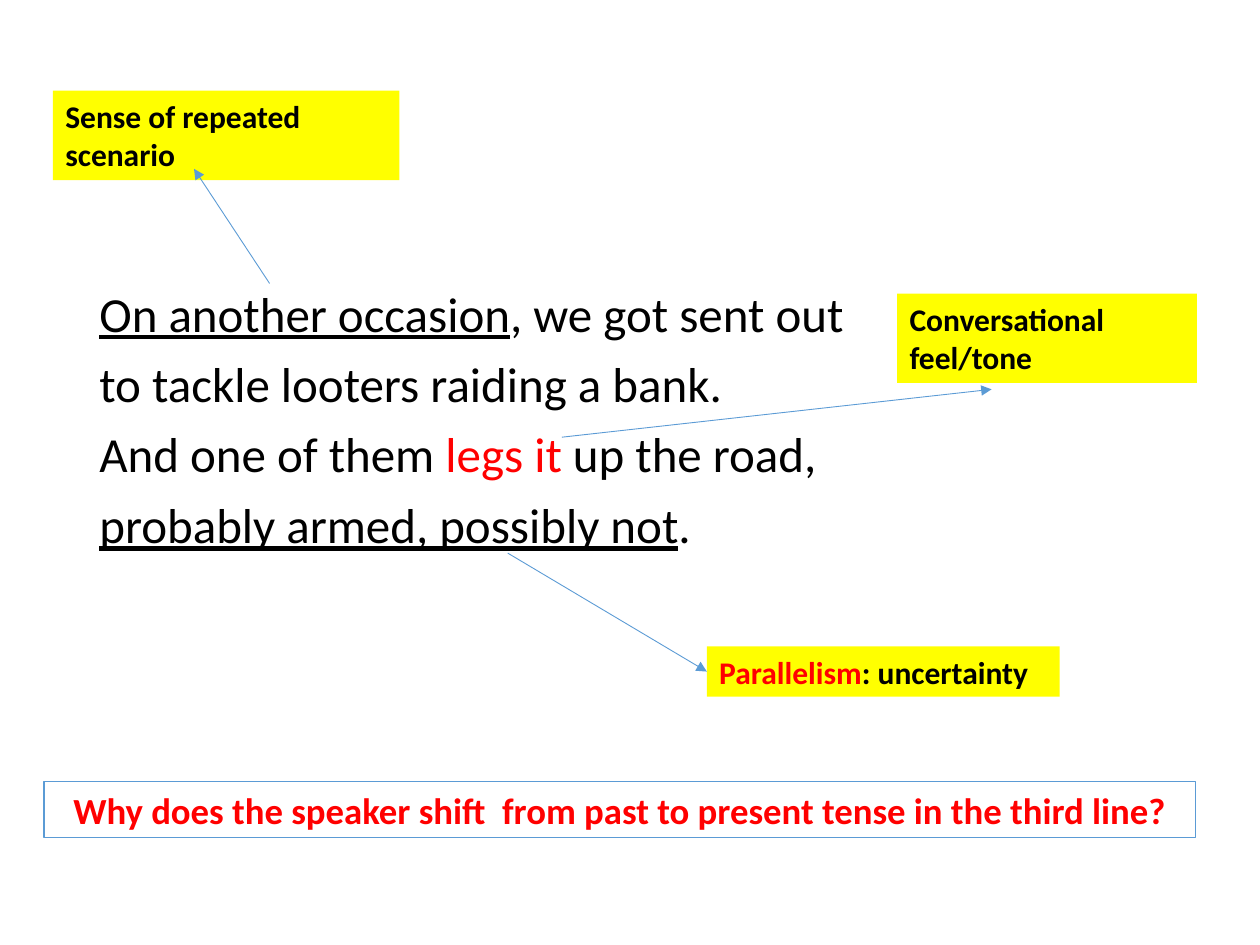
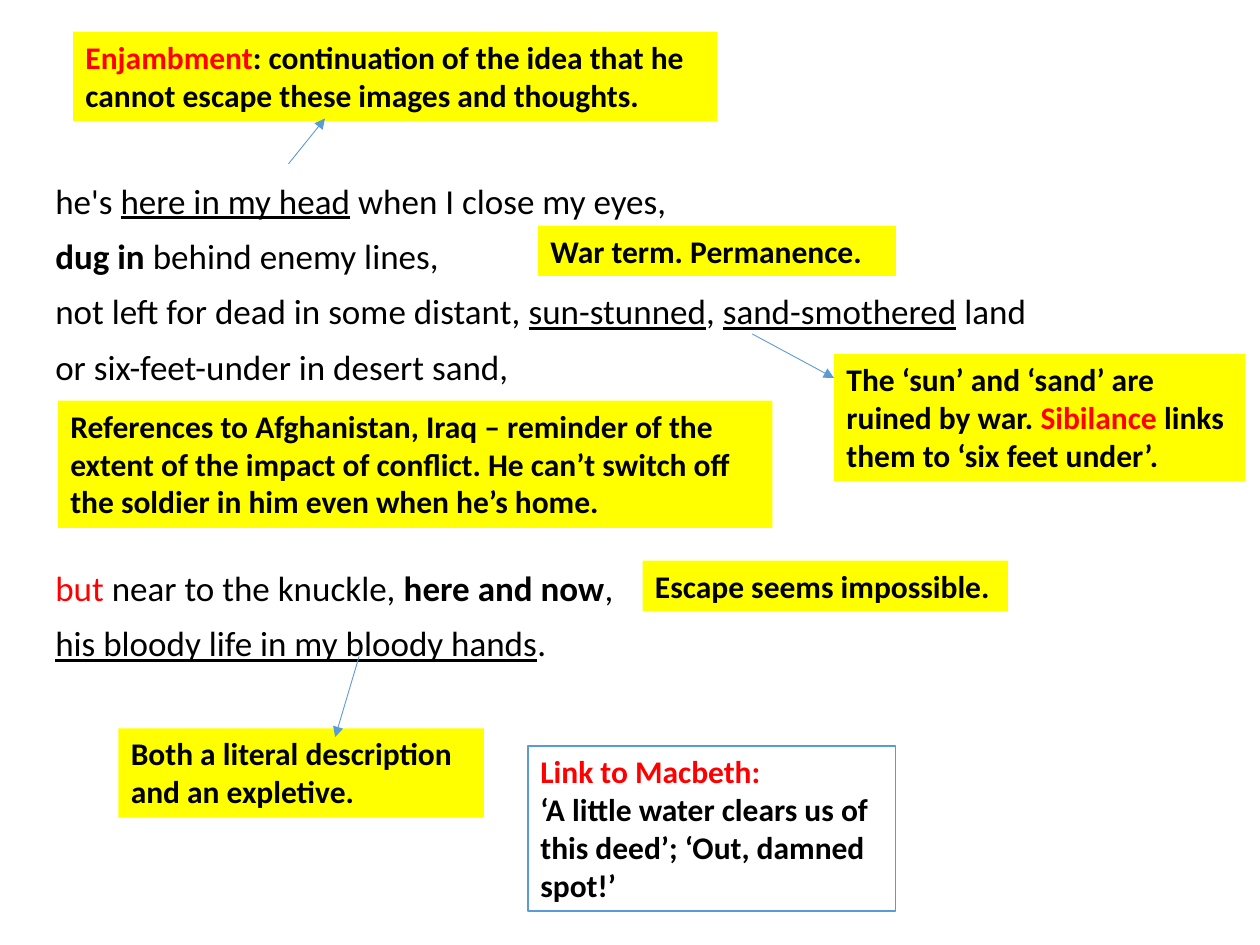
from dataclasses import dataclass
from typing import Optional

from lxml.etree import SubElement
from pptx import Presentation
from pptx.dml.color import RGBColor
from pptx.enum.dml import MSO_THEME_COLOR
from pptx.enum.shapes import MSO_CONNECTOR
from pptx.enum.text import MSO_ANCHOR, MSO_AUTO_SIZE, PP_ALIGN
from pptx.oxml.ns import qn
from pptx.util import Inches, Pt

FONT = "Calibri"
BLACK = "000000"
RED = "FF0000"
YELLOW = "FFFF00"
BLUE = "5B9BD5"
VERSE_GAP = 10
NOTE_SIZE = 18


@dataclass(frozen=True)
class Run:
    text: str
    color: str = BLACK
    bold: bool = False
    underline: bool = False


@dataclass(frozen=True)
class Paragraph:
    runs: tuple[Run, ...]
    space_before: float = 0
    line_spacing: float = 1


@dataclass(frozen=True)
class Box:
    left: float
    top: float
    width: float
    height: float
    paragraphs: tuple[Paragraph, ...]
    size: float = NOTE_SIZE
    fill: Optional[str] = None
    outline: Optional[str] = None
    centered: bool = False


@dataclass(frozen=True)
class Arrow:
    start: tuple[float, float]
    end: tuple[float, float]
    target: Optional[Box] = None
    side: int = 1


@dataclass(frozen=True)
class Page:
    boxes: tuple[Box, ...]
    arrows: tuple[Arrow, ...]


def rgb(color: str) -> RGBColor:
    return RGBColor.from_string(color)


def verse(*runs: Run, space_before: float = VERSE_GAP) -> Paragraph:
    return Paragraph(runs, space_before, 0.9)


def strong(text: str, color: str = BLACK) -> Run:
    return Run(text, color, bold=True)


def marked(text: str) -> Run:
    return Run(text, underline=True)


def note(left: float, top: float, width: float, height: float, *runs: Run) -> Box:
    return Box(left, top, width, height, (Paragraph(runs),), fill=YELLOW)


def draw_box(slide, box: Box):
    shape = slide.shapes.add_textbox(
        Inches(box.left), Inches(box.top), Inches(box.width), Inches(box.height)
    )
    if box.fill:
        shape.fill.solid()
        shape.fill.fore_color.rgb = rgb(box.fill)
    if box.outline:
        shape.line.color.rgb = rgb(box.outline)
        shape.line.width = Pt(0.75)
    frame = shape.text_frame
    frame.word_wrap = True
    frame.vertical_anchor = MSO_ANCHOR.TOP
    if box.fill or box.outline:
        frame.auto_size = MSO_AUTO_SIZE.SHAPE_TO_FIT_TEXT
    for index, content in enumerate(box.paragraphs):
        paragraph = frame.add_paragraph() if index else frame.paragraphs[0]
        paragraph.alignment = PP_ALIGN.CENTER if box.centered else PP_ALIGN.LEFT
        paragraph.line_spacing = content.line_spacing
        paragraph.space_before = Pt(content.space_before)
        for piece in content.runs:
            run = paragraph.add_run()
            run.text = piece.text
            run.font.name = FONT
            run.font.size = Pt(box.size)
            run.font.bold = piece.bold
            run.font.underline = piece.underline
            run.font.color.rgb = rgb(piece.color)
    return shape


def draw_arrow(slide, arrow: Arrow, drawn: dict) -> None:
    points = [Inches(value) for value in arrow.start + arrow.end]
    connector = slide.shapes.add_connector(MSO_CONNECTOR.STRAIGHT, *points)
    if arrow.target:
        connector.end_connect(drawn[arrow.target], arrow.side)
    connector.line.color.rgb = rgb(BLUE)
    connector.line.width = Pt(0.5)
    SubElement(connector.line._get_or_add_ln(), qn("a:tailEnd"), type="triangle")
    SubElement(connector._element.spPr, qn("a:effectLst"))


def draw_page(presentation, page: Page) -> None:
    slide = presentation.slides.add_slide(presentation.slide_layouts[6])
    slide.background.fill.solid()
    slide.background.fill.fore_color.theme_color = MSO_THEME_COLOR.BACKGROUND_1
    drawn = {box: draw_box(slide, box) for box in page.boxes}
    for arrow in page.arrows:
        draw_arrow(slide, arrow, drawn)


looters_stanza = Box(
    0.69, 2.25, 8.62, 4.51,
    (
        verse(marked("On another occasion"), Run(", we got sent out")),
        verse(Run("to tackle looters raiding a bank.")),
        verse(Run("And one of them "), Run("legs it ", RED), Run("up the road,")),
        verse(marked("probably armed, possibly not"), Run(".")),
    ),
    size=28,
)
parallelism = note(5.61, 5.13, 2.8, 0.4, strong("Parallelism", RED), strong(": uncertainty"))
tense_question = Box(
    0.35, 6.2, 9.14, 0.45,
    (Paragraph((strong(
        "Why does the speaker shift  from past to present tense in the third line?", RED
    ),)),),
    size=21, outline=BLUE, centered=True,
)
looters_page = Page(
    boxes=(
        looters_stanza,
        note(0.42, 0.72, 2.75, 0.71, strong("Sense of repeated scenario")),
        note(7.12, 2.33, 2.38, 0.71, strong("Conversational feel/tone")),
        parallelism,
        tense_question,
    ),
    arrows=(
        Arrow((2.14, 2.25), (1.54, 1.34)),
        Arrow((4.46, 3.47), (7.87, 3.09)),
        Arrow((4.03, 4.39), (5.61, 5.33), parallelism),
    ),
)

memory_stanza = Box(
    0.34, 1.41, 8.62, 4.91,
    (
        verse(Run("he's "), marked("here in my head"), Run(" when I close my eyes,")),
        verse(strong("dug in "), Run("behind enemy lines,")),
        verse(
            Run("not left for dead in some distant, "), marked("sun-stunned"), Run(", "),
            marked("sand-smothered"), Run(" land"),
        ),
        verse(Run("or six-feet-under in desert sand,")),
        verse(
            Run("but ", RED), Run("near to the knuckle, "), strong("here and now"), Run(","),
            space_before=105,
        ),
        verse(marked("his bloody life in my bloody hands"), Run(".")),
    ),
    size=20,
)
macbeth_link = Box(
    4.19, 5.92, 2.92, 1.31,
    (
        Paragraph((strong("Link to Macbeth:", RED),)),
        Paragraph((strong("‘A little water clears us of this deed’; ‘Out, damned spot!’"),)),
    ),
    outline=BLUE,
)
memory_page = Page(
    boxes=(
        memory_stanza,
        note(
            0.58, 0.25, 5.11, 0.71, strong("Enjambment", RED),
            strong(": continuation of the idea that he cannot escape these images and thoughts."),
        ),
        note(4.27, 1.79, 2.84, 0.4, strong("War term. Permanence.")),
        note(0.46, 3.18, 5.67, 1.01, strong(
            "References to Afghanistan, Iraq – reminder of the extent of the impact of conflict. "
            "He can’t switch off the soldier in him even when he’s home."
        )),
        note(5.1, 4.45, 2.9, 0.4, strong("Escape seems impossible.")),
        note(0.94, 5.78, 2.9, 0.71, strong("Both a literal description and an expletive.")),
        macbeth_link,
        note(
            6.62, 2.81, 3.26, 1.01, strong("The ‘sun’ and ‘sand’ are ruined by war. "),
            strong("Sibilance", RED), strong(" links them to ‘six feet under’."),
        ),
    ),
    arrows=(
        Arrow((2.29, 1.3), (2.58, 0.94)),
        Arrow((2.85, 5.21), (2.66, 5.85)),
        Arrow((5.97, 2.65), (6.62, 3)),
    ),
)


def main() -> None:
    presentation = Presentation()
    presentation.slide_width = Inches(10)
    presentation.slide_height = Inches(7.5)
    for page in (looters_page, memory_page):
        draw_page(presentation, page)
    presentation.save("out.pptx")


if __name__ == "__main__":
    main()
